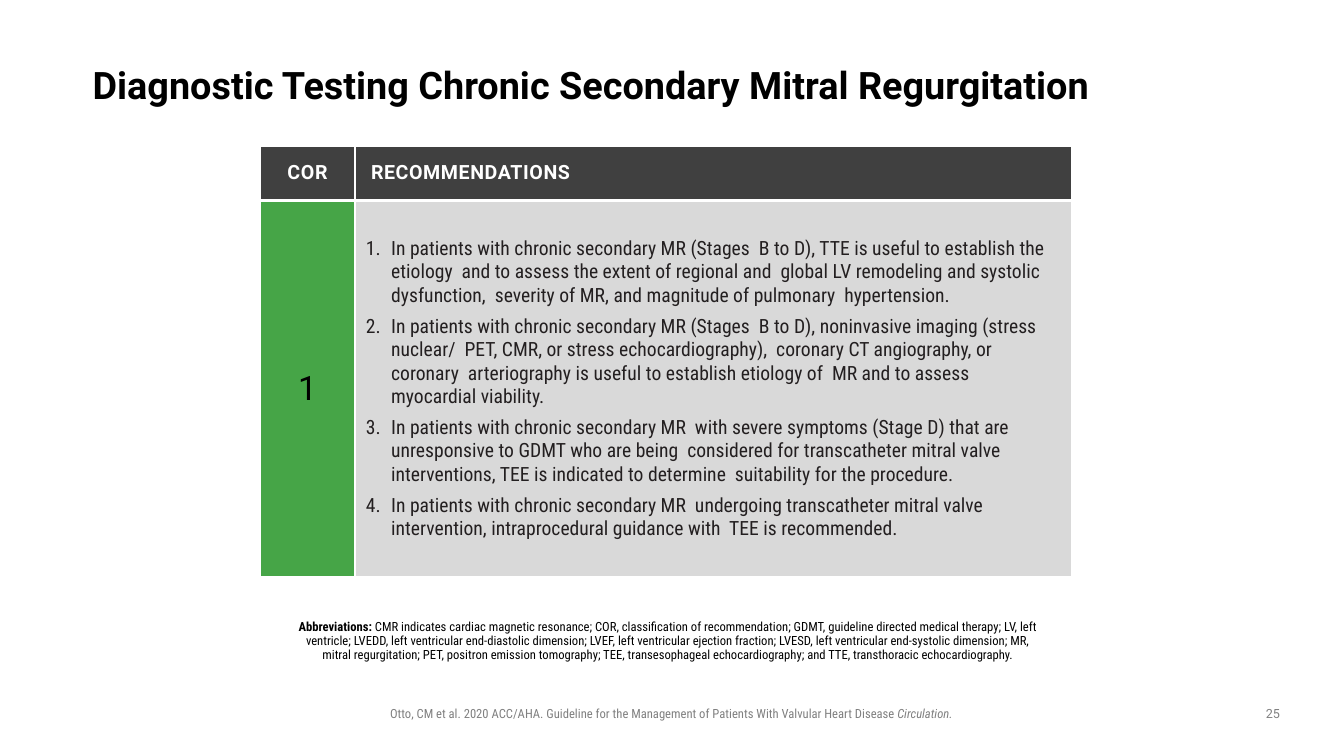
from lxml import etree
from pptx import Presentation
from pptx.dml.color import RGBColor
from pptx.enum import text as txt
from pptx.oxml import ns
from pptx.util import Pt

CONDENSED = "Roboto Condensed"
CENTER = txt.PP_ALIGN.CENTER
MIDDLE = txt.MSO_ANCHOR.MIDDLE


def color(value):
    return RGBColor.from_string(value)


def write(paragraph, text, size=9, font=CONDENSED, fill="000000",
          bold=False, italic=False, spacing=0, align=None):
    run = paragraph.add_run()
    run.text = text
    run.font.size = Pt(size)
    run.font.name = font
    run.font.color.rgb = color(fill)
    run.font.bold = bold
    run.font.italic = italic
    if spacing:
        run.font._element.set("spc", str(round(spacing * 100)))
    if align is not None:
        paragraph.alignment = align


prs = Presentation()
prs.slide_width, prs.slide_height = Pt(960), Pt(540)
slide = prs.slides.add_slide(prs.slide_layouts[6])

# Text frames: left, top, width, height, then left, top, right, bottom insets
frames = []
for box, insets in [
    ((66.2, 36, 820, 52), (0, 0, 0, 0)),
    ((211, 440, 538.6, 21.6), (0, 3.6, 7.2, 3.6)),
    ((228.2, 500.4, 502.6, 18), (7.2, 3.6, 7.2, 3.6)),
    ((894.2, 500.4, 30.2, 18.7), (7.2, 3.6, 7.2, 3.6)),
]:
    frame = slide.shapes.add_textbox(*map(Pt, box)).text_frame
    frame.word_wrap = True
    (frame.margin_left, frame.margin_top,
     frame.margin_right, frame.margin_bottom) = map(Pt, insets)
    frames.append(frame)
title, abbreviations, citation, page = [f.paragraphs[0] for f in frames]

# Title
frames[0].vertical_anchor = MIDDLE
title.line_spacing = 0.9
write(title, "Diagnostic Testing Chronic Secondary Mitral Regurgitation",
      size=27, font="Roboto", bold=True)

# Recommendation table
table = slide.shapes.add_table(2, 2, Pt(185.8), Pt(103.7), Pt(580.3), Pt(308.9)).table
table.first_row = table.horz_banding = False
for column, width in zip(table.columns, (67.7, 512.6)):
    column.width = Pt(width)
for row, height in zip(table.rows, (39.6, 269.3)):
    row.height = Pt(height)

# Cell fills and white borders
for cell, fill in zip(table.iter_cells(), ("404040", "404040", "46A547", "D9D9D9")):
    cell.vertical_anchor = MIDDLE
    properties = cell._tc.get_or_add_tcPr()
    for side in ("a:lnL", "a:lnR", "a:lnT", "a:lnB"):
        border = etree.SubElement(properties, ns.qn(side), w=str(Pt(2.25)))
        solid = etree.SubElement(border, ns.qn("a:solidFill"))
        etree.SubElement(solid, ns.qn("a:srgbClr"), val="FFFFFF")
    cell.fill.solid()
    cell.fill.fore_color.rgb = color(fill)

cor_head, advice_head, cor, advice = table.iter_cells()
for cell, right in ((cor, 3.6), (advice, 14.4)):
    cell.margin_left = cell.margin_top = cell.margin_bottom = Pt(3.6)
    cell.margin_right = Pt(right)

# Header row and class
heading = dict(size=14, font="Roboto", fill="FFFFFF", bold=True)
write(cor_head.text_frame.paragraphs[0], "COR", spacing=0.5, align=CENTER, **heading)
advice_title = advice_head.text_frame.paragraphs[0]
advice_title._p.get_or_add_pPr().set("marL", str(Pt(4.3)))
write(advice_title, "RECOMMENDATIONS", spacing=0.4, **heading)
write(cor.text_frame.paragraphs[0], "1", size=24, font="Roboto", align=CENTER)

# Numbered recommendations
recommendations = [
    "In patients with chronic secondary MR (Stages  B to D), TTE is useful to "
    "establish the etiology  and to assess the extent of regional and  global LV "
    "remodeling and systolic dysfunction,  severity of MR, and magnitude of "
    "pulmonary  hypertension.",
    "In patients with chronic secondary MR (Stages  B to D), noninvasive imaging "
    "(stress nuclear/  PET, CMR, or stress echocardiography),  coronary CT "
    "angiography, or coronary  arteriography is useful to establish etiology of  "
    "MR and to assess myocardial viability.",
    "In patients with chronic secondary MR  with severe symptoms (Stage D) that "
    "are  unresponsive to GDMT who are being  considered for transcatheter mitral "
    "valve  interventions, TEE is indicated to determine  suitability for the "
    "procedure.",
    "In patients with chronic secondary MR  undergoing transcatheter mitral valve  "
    "intervention, intraprocedural guidance with  TEE is recommended.",
]
for index, recommendation in enumerate(recommendations):
    body = advice.text_frame
    item = body.add_paragraph() if index else body.paragraphs[0]
    item.space_after = Pt(6)
    layout = item._p.get_or_add_pPr()
    layout.set("marL", str(Pt(22.3)))
    layout.set("indent", str(Pt(-18)))
    etree.SubElement(layout, ns.qn("a:buFont"), typeface=CONDENSED)
    etree.SubElement(layout, ns.qn("a:buAutoNum"), type="arabicPeriod")
    write(item, recommendation, size=14, fill="231F20")

# Abbreviations
abbreviations.line_spacing = 0.9
write(abbreviations, "Abbreviations: ", bold=True, align=CENTER)
write(abbreviations,
      "CMR indicates cardiac magnetic resonance; COR, classification of "
      "recommendation; GDMT, guideline directed medical therapy; LV, left "
      "ventricle; LVEDD, left ventricular end-diastolic dimension; LVEF, left "
      "ventricular ejection fraction; LVESD, left ventricular end-systolic "
      "dimension; MR, mitral regurgitation; PET, positron emission tomography; "
      "TEE, transesophageal echocardiography; and TTE, transthoracic "
      "echocardiography.")

# Citation and page number
write(citation, "Otto, CM et al. 2020 ACC/AHA. Guideline for the Management of "
      "Patients With Valvular Heart Disease ", fill="808080", align=CENTER)
write(citation, "Circulation.", fill="808080", italic=True)
write(page, "25", font="Roboto", fill="808080", align=CENTER)

prs.save("out.pptx")
